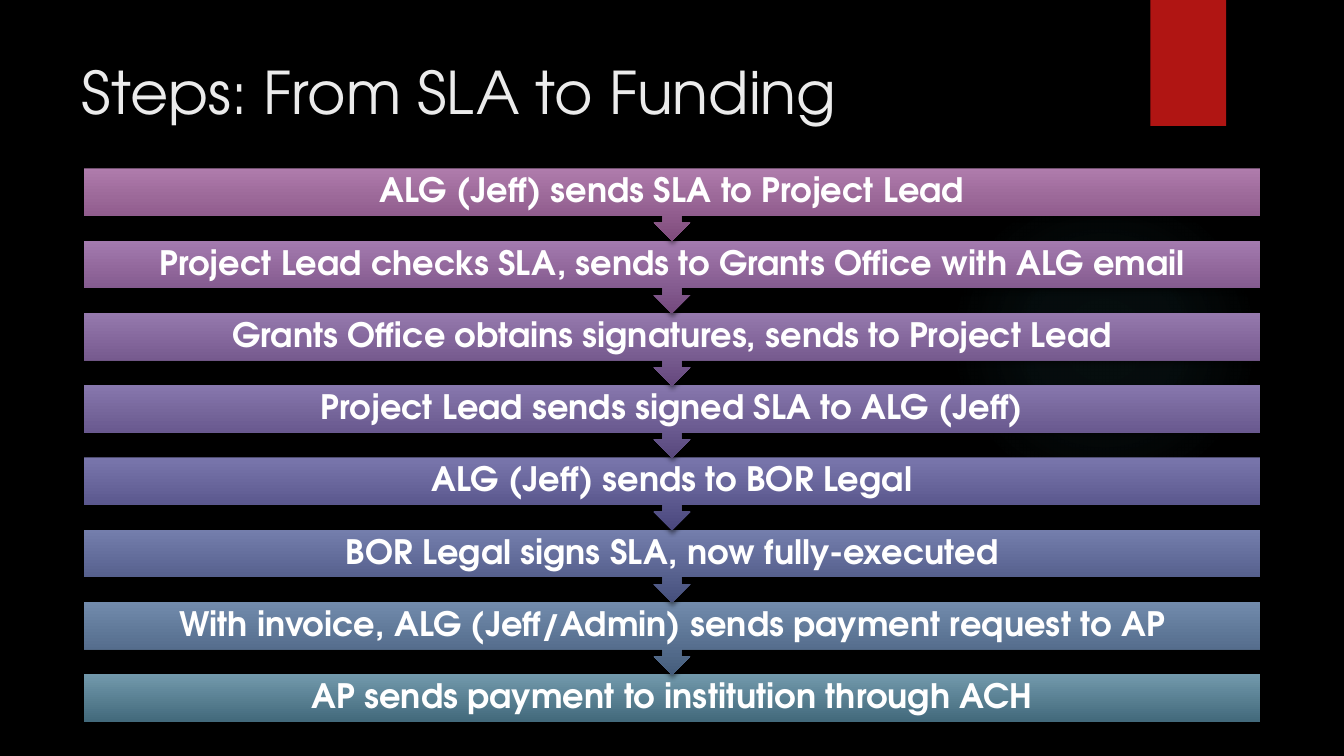
from pptx import Presentation
from pptx import util as u
from pptx.dml.color import RGBColor
from pptx.enum import shapes, text
from pptx.oxml import parse_xml
from pptx.oxml.ns import nsdecls, qn

BLACK = RGBColor(0x00, 0x00, 0x00)
WHITE = RGBColor(0xFF, 0xFF, 0xFF)
TITLE_GREY = RGBColor(0xEB, 0xEB, 0xEB)
RED = RGBColor(0xB0, 0x15, 0x13)
GLOW_TEAL = RGBColor(0x50, 0xB9, 0xC1)

STEPS = [
    ("ALG (Jeff) sends SLA to Project Lead",
     RGBColor(0xAF, 0x7C, 0xAC), RGBColor(0x7F, 0x4B, 0x7C)),
    ("Project Lead checks SLA, sends to Grants Office with ALG email",
     RGBColor(0xA3, 0x7A, 0xAE), RGBColor(0x74, 0x4A, 0x7E)),
    ("Grants Office obtains signatures, sends to Project Lead",
     RGBColor(0x95, 0x79, 0xAD), RGBColor(0x66, 0x49, 0x7E)),
    ("Project Lead sends signed SLA to ALG (Jeff)",
     RGBColor(0x87, 0x77, 0xAD), RGBColor(0x58, 0x48, 0x7D)),
    ("ALG (Jeff) sends to BOR Legal",
     RGBColor(0x79, 0x76, 0xAC), RGBColor(0x4A, 0x47, 0x7D)),
    ("BOR Legal signs SLA, now fully-executed",
     RGBColor(0x74, 0x7E, 0xAC), RGBColor(0x46, 0x50, 0x7D)),
    ("With invoice, ALG (Jeff/Admin) sends payment request to AP",
     RGBColor(0x72, 0x8B, 0xAC), RGBColor(0x45, 0x5D, 0x7C)),
    ("AP sends payment to institution through ACH",
     RGBColor(0x71, 0x98, 0xAB), RGBColor(0x43, 0x6A, 0x7C)),
]
STEPS_TOP, STEP_PITCH = 120.2, 51.64
BAR_HEIGHT, CALLOUT_HEIGHT = 33.7, 51.9


class FundingSlide:
    """Style and drawing methods for the funding steps slide."""

    font = "TeX Gyre Adventor"

    def __init__(self, deck):
        self.page = deck.slides.add_slide(deck.slide_layouts[5])
        background = self.page.background.fill
        background.solid()
        background.fore_color.rgb = BLACK

    def set_words(self, frame, words, size, color, align, bold=False):
        frame.text = words
        frame.word_wrap = True
        para = frame.paragraphs[0]
        para.alignment = align
        span = para.runs[0]
        span.font.name = self.font
        span.font.size = u.Pt(size)
        span.font.bold = bold
        span.font.color.rgb = color
        return para

    def title(self, words, left, top, width, height):
        box = self.page.shapes.title
        box.left, box.top = u.Pt(left), u.Pt(top)
        box.width, box.height = u.Pt(width), u.Pt(height)
        frame = box.text_frame
        frame.auto_size = text.MSO_AUTO_SIZE.NONE
        frame.vertical_anchor = text.MSO_ANCHOR.TOP
        self.set_words(frame, words, 42, TITLE_GREY, text.PP_ALIGN.LEFT)

    def shape(self, kind, left, top, width, height):
        box = self.page.shapes.add_shape(
            kind, u.Pt(left), u.Pt(top), u.Pt(width), u.Pt(height))
        box.line.fill.background()
        box.shadow.inherit = False
        return box

    def add_shadow(self, box):
        box._element.spPr.find(qn("a:effectLst")).append(parse_xml(
            f'<a:outerShdw {nsdecls("a")} blurRad="{u.Pt(3)}" dist="{u.Pt(2)}" '
            'dir="5400000" rotWithShape="0"><a:srgbClr val="000000">'
            '<a:alpha val="45000"/></a:srgbClr></a:outerShdw>'))

    def glow(self, left, top, size, color, stops):
        box = self.shape(shapes.MSO_SHAPE.OVAL, left, top, size, size)
        box.fill.background()
        marks = "".join(
            f'<a:gs pos="{place * 1000}"><a:srgbClr val="{color}">'
            f'<a:alpha val="{alpha * 1000}"/></a:srgbClr></a:gs>'
            for place, alpha in stops)
        properties = box._element.spPr
        properties.replace(properties.find(qn("a:noFill")), parse_xml(
            f'<a:gradFill {nsdecls("a")}><a:gsLst>{marks}</a:gsLst>'
            '<a:path path="circle"><a:fillToRect l="50000" t="50000" '
            'r="50000" b="50000"/></a:path></a:gradFill>'))

    def ribbon(self, left, top, width, height, color):
        box = self.shape(shapes.MSO_SHAPE.RECTANGLE, left, top, width, height)
        box.fill.solid()
        box.fill.fore_color.rgb = color
        self.add_shadow(box)

    def step(self, kind, top, height, words, light, dark):
        box = self.shape(kind, 60, top, 840, height)
        box.fill.gradient()
        box.fill.gradient_angle = 270
        for stop, color in zip(box.fill.gradient_stops, (light, dark)):
            stop.color.rgb = color
        self.add_shadow(box)
        frame = box.text_frame
        frame.margin_left = frame.margin_right = u.Pt(13.5)
        frame.margin_top = frame.margin_bottom = 0
        frame.vertical_anchor = text.MSO_ANCHOR.MIDDLE
        para = self.set_words(
            frame, words, 24, WHITE, text.PP_ALIGN.CENTER, True)
        para.line_spacing = 0.9


def main():
    deck = Presentation()
    deck.slide_width, deck.slide_height = u.Pt(960), u.Pt(540)
    slide = FundingSlide(deck)
    slide.glow(677.5, 131.8, 221.8, GLOW_TEAL, [(0, 7), (36, 6), (69, 0)])
    slide.ribbon(821.8, 0, 54, 90, RED)
    slide.title("Steps: From SLA to Funding", 51, 36, 741, 110)
    last = len(STEPS) - 1
    for index in range(last, -1, -1):
        if index == last:
            kind, height = shapes.MSO_SHAPE.RECTANGLE, BAR_HEIGHT
        else:
            kind, height = shapes.MSO_SHAPE.DOWN_ARROW_CALLOUT, CALLOUT_HEIGHT
        slide.step(kind, STEPS_TOP + index * STEP_PITCH, height, *STEPS[index])
    deck.save("out.pptx")


if __name__ == "__main__":
    main()
